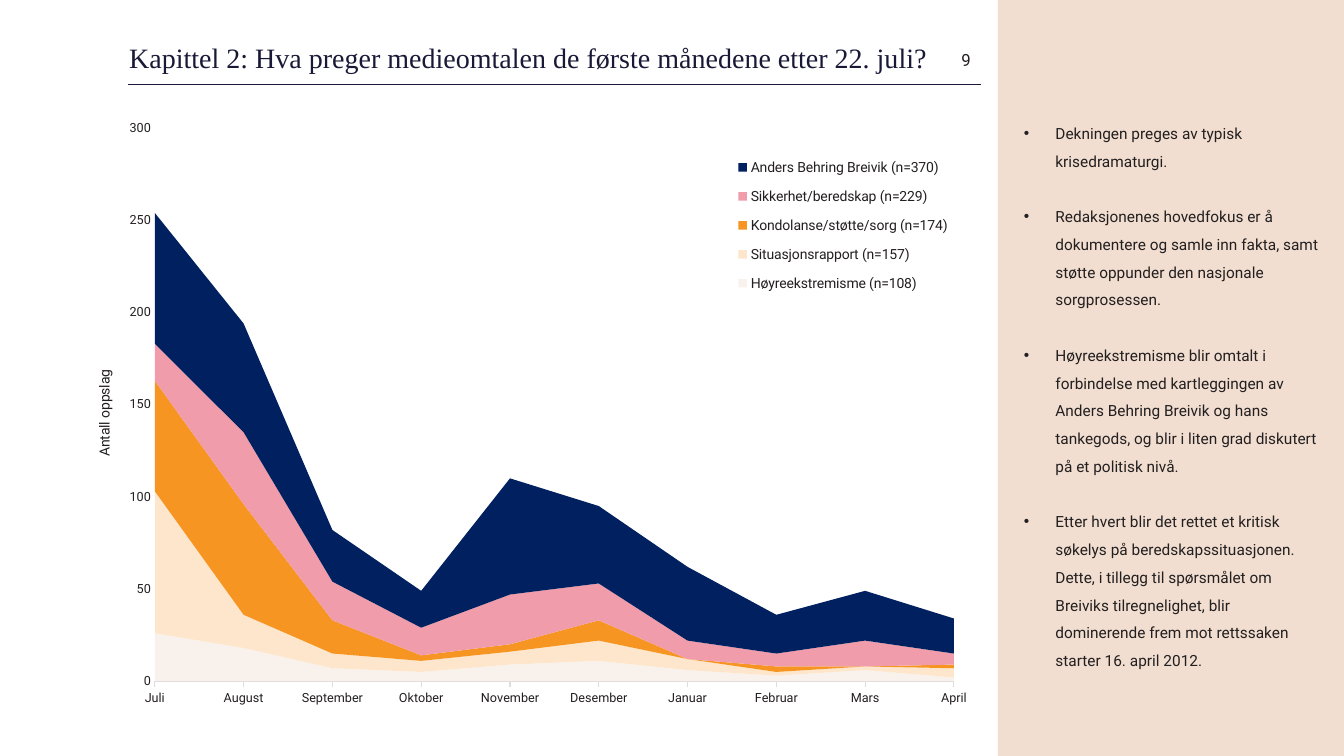
"""Build the slide on media coverage in the months after 22 July."""
from typing import NamedTuple

from pptx import Presentation
from pptx.chart.data import CategoryChartData
from pptx.dml.color import RGBColor
from pptx.enum.chart import XL_CHART_TYPE, XL_LEGEND_POSITION, XL_TICK_MARK
from pptx.enum.shapes import MSO_CONNECTOR, MSO_SHAPE
from pptx.enum.text import MSO_ANCHOR, PP_ALIGN
from pptx.oxml import parse_xml
from pptx.oxml.ns import nsdecls, qn
from pptx.slide import Slide
from pptx.util import Pt

INK, NAVY, SAND, AXIS_GREY = "231F20", "191836", "F1DED0", "E0DCDD"
BODY_FONT, TITLE_FONT = "Roboto", "Times New Roman"


class Theme(NamedTuple):
    name: str
    color: str
    counts: tuple[int, ...]


class Label(NamedTuple):
    box: tuple[float, float, float, float]
    paragraphs: tuple[str, ...]
    size: float
    font: str = BODY_FONT
    color: str = INK
    align: PP_ALIGN = PP_ALIGN.LEFT
    anchor: MSO_ANCHOR = MSO_ANCHOR.MIDDLE
    inset: tuple[float, float] = (7.2, 3.6)
    line_spacing: float = 1.0
    gap: float = 0
    bullet_indent: float = 0


MONTHS = ("Juli", "August", "September", "Oktober", "November",
          "Desember", "Januar", "Februar", "Mars", "April")
THEMES = (
    Theme("Høyreekstremisme (n=108)", "F9F2EC", (26, 18, 7, 5, 9, 11, 6, 3, 6, 2)),
    Theme("Situasjonsrapport (n=157)", "FDE6CB", (77, 18, 8, 6, 7, 11, 6, 2, 2, 5)),
    Theme("Kondolanse/støtte/sorg (n=174)", "F79522", (60, 60, 18, 3, 4, 11, 0, 3, 0, 2)),
    Theme("Sikkerhet/beredskap (n=229)", "F09CAB", (20, 39, 21, 15, 27, 20, 10, 7, 14, 6)),
    Theme("Anders Behring Breivik (n=370)", "002060", (71, 59, 28, 20, 63, 42, 40, 21, 27, 19)),
)
FINDINGS = (
    "Dekningen preges av typisk krisedramaturgi.",
    "Redaksjonenes hovedfokus er å dokumentere og samle inn fakta, samt støtte "
    "oppunder den nasjonale sorgprosessen.",
    "Høyreekstremisme blir omtalt i forbindelse med kartleggingen av Anders Behring "
    "Breivik og hans tankegods, og blir i liten grad diskutert på et politisk nivå.",
    "Etter hvert blir det rettet et kritisk søkelys på beredskapssituasjonen. Dette, i "
    "tillegg til spørsmålet om Breiviks tilregnelighet, blir dominerende frem mot "
    "rettssaken starter 16. april 2012.",
)
LABELS = (
    Label((92.2, 27.4, 608.4, 30.2),
          ("Kapittel 2: Hva preger medieomtalen de første månedene etter 22. juli?",),
          20, TITLE_FONT, NAVY, inset=(0, 0), line_spacing=0.9),
    Label((620.6, 27.4, 80, 30.2), ("9",), 12, align=PP_ALIGN.RIGHT),
    Label((724.3, 78.5, 225.4, 404.6), FINDINGS, 11, anchor=MSO_ANCHOR.TOP,
          line_spacing=1.5, gap=19.8, bullet_indent=22.5),
)


def rgb(value: str) -> RGBColor:
    """Turn a hex string into a colour."""
    return RGBColor.from_string(value)


def style_font(font, size: float, name: str = BODY_FONT, color: str = INK) -> None:
    """Set the size, face and colour of a font."""
    font.size, font.name, font.bold = Pt(size), name, False
    font.color.rgb = rgb(color)


def add_label(slide: Slide, label: Label) -> None:
    """Draw one text box with its paragraphs."""
    frame = slide.shapes.add_textbox(*map(Pt, label.box)).text_frame
    frame.word_wrap = True
    frame.vertical_anchor = label.anchor
    frame.margin_left = frame.margin_right = Pt(label.inset[0])
    frame.margin_top = frame.margin_bottom = Pt(label.inset[1])
    for index, wording in enumerate(label.paragraphs):
        paragraph = frame.add_paragraph() if index else frame.paragraphs[0]
        if label.bullet_indent:
            properties = paragraph._p.get_or_add_pPr()
            indent = Pt(label.bullet_indent)
            properties.set("marL", str(indent))
            properties.set("indent", str(-indent))
            properties.append(parse_xml(f'<a:buFont {nsdecls("a")} typeface="Arial"/>'))
            properties.append(parse_xml(f'<a:buChar {nsdecls("a")} char="•"/>'))
        paragraph.alignment = label.align
        paragraph.line_spacing = label.line_spacing
        if index:
            paragraph.space_before = Pt(label.gap)
        run = paragraph.add_run()
        run.text = wording
        style_font(run.font, label.size, label.font, label.color)


def add_frame(slide: Slide) -> None:
    """Draw the title rule and the side panel."""
    rule = slide.shapes.add_connector(
        MSO_CONNECTOR.STRAIGHT, Pt(91.4), Pt(60.5), Pt(700.6), Pt(60.5))
    rule.line.color.rgb = rgb(NAVY)
    rule.line.width = Pt(0.75)
    rule._element.spPr.append(parse_xml(f'<a:effectLst {nsdecls("a")}/>'))
    panel = slide.shapes.add_shape(MSO_SHAPE.RECTANGLE, Pt(712.8), Pt(0), Pt(247.2), Pt(540))
    panel.shadow.inherit = False
    panel.fill.solid()
    panel.fill.fore_color.rgb = rgb(SAND)
    panel.line.fill.background()


def place(part, position: int, target: str, *fractions: float) -> None:
    """Give a chart part a manual place in fractions of the chart."""
    for old in part.findall(qn("c:layout")):
        part.remove(old)
    sizes = "".join(f'<c:{tag} val="{value}"/>' for tag, value in zip("xywh", fractions))
    part.insert(position, parse_xml(
        f'<c:layout {nsdecls("c")}><c:manualLayout>{target}'
        f'<c:xMode val="edge"/><c:yMode val="edge"/>{sizes}</c:manualLayout></c:layout>'))


def add_coverage_chart(slide: Slide) -> None:
    """Draw the stacked areas of articles per month and theme."""
    coverage = CategoryChartData()
    coverage.categories = MONTHS
    for theme in THEMES:
        coverage.add_series(theme.name, theme.counts)
    chart = slide.shapes.add_chart(
        XL_CHART_TYPE.AREA_STACKED, Pt(66.2), Pt(78.5), Pt(634.3), Pt(434.2), coverage).chart
    chart.has_title = False
    style_font(chart.font, 10)
    chart.plots[0].vary_by_categories = False
    for theme, area in zip(THEMES, chart.plots[0].series):
        area.format.fill.solid()
        area.format.fill.fore_color.rgb = rgb(theme.color)
        area.format.line.fill.background()

    months, articles = chart.category_axis, chart.value_axis
    for axis in (months, articles):
        axis.has_major_gridlines = False
        axis.minor_tick_mark = XL_TICK_MARK.NONE
        style_font(axis.tick_labels.font, 9)
    months.major_tick_mark = XL_TICK_MARK.OUTSIDE
    months.format.line.color.rgb = rgb(AXIS_GREY)
    months.format.line.width = Pt(0.75)
    articles.major_tick_mark = XL_TICK_MARK.NONE
    articles.format.line.fill.background()
    articles.minimum_scale, articles.maximum_scale, articles.major_unit = 0, 300, 50
    caption = articles.axis_title.text_frame.paragraphs[0].add_run()
    caption.text = "Antall oppslag"
    style_font(caption.font, 10)

    chart.has_legend = True
    chart.legend.position = XL_LEGEND_POSITION.RIGHT
    chart.legend.include_in_layout = False
    style_font(chart.legend.font, 10)
    place(chart.legend._element, 1, "", 0.72, 0.06, 0.25, 0.26)
    plot_area = chart._chartSpace.find(f'{qn("c:chart")}/{qn("c:plotArea")}')
    plot_area.find(f'{qn("c:valAx")}/{qn("c:crossBetween")}').set("val", "midCat")
    place(plot_area, 0, '<c:layoutTarget val="inner"/>', 0.07, 0.03, 0.9, 0.91)


def main() -> None:
    """Build and save the slide."""
    deck = Presentation()
    deck.slide_width, deck.slide_height = Pt(960), Pt(540)
    slide = deck.slides.add_slide(deck.slide_layouts[6])
    add_frame(slide)
    for label in LABELS:
        add_label(slide, label)
    add_coverage_chart(slide)
    deck.save("out.pptx")


if __name__ == "__main__":
    main()
